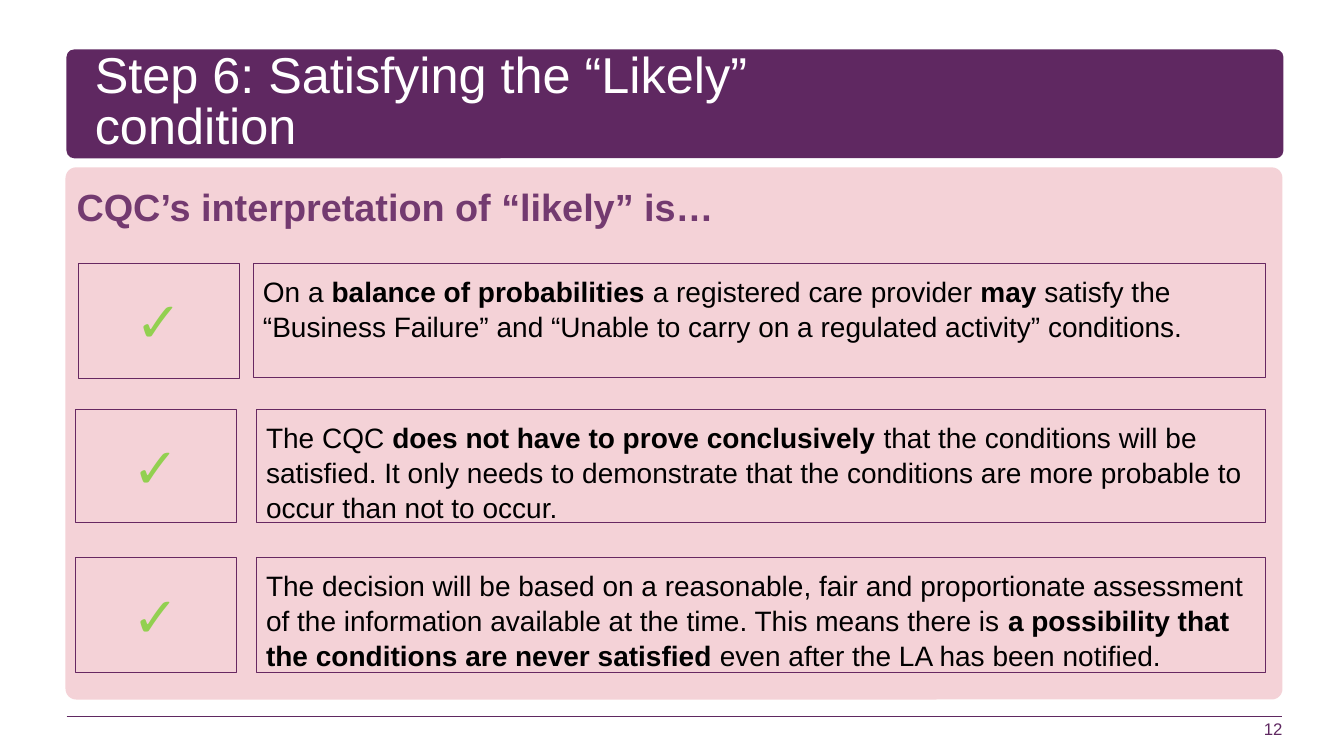
from dataclasses import dataclass

from lxml.etree import SubElement
from pptx import Presentation
from pptx.dml.color import RGBColor
from pptx.enum.shapes import MSO_CONNECTOR, MSO_SHAPE
from pptx.enum.text import MSO_ANCHOR as Anchor, MSO_AUTO_SIZE, PP_ALIGN as Align
from pptx.oxml.ns import qn
from pptx.util import Emu, Pt

PX = 9144  # 100 px to the inch


@dataclass(frozen=True)
class Theme:
    font: str = "Arial"
    banner: str = "5F2861"
    border: str = "672861"
    panel: str = "EFBBC3"
    heading: str = "733A70"
    tick: str = "92D050"
    text: str = "000000"
    white: str = "FFFFFF"
    title_size: int = 36
    heading_size: int = 27
    body_size: int = 20
    tick_size: int = 40
    number_size: int = 12


THEME = Theme()

# Each row: tick box, text box, and runs of (text, bold)
ROWS = [
    ((78, 261, 159, 114), (251, 261, 1004, 114), [
        ("On a ", False),
        ("balance of probabilities ", True),
        ("a registered care provider ", False),
        ("may", True),
        (" satisfy the “Business Failure” and “Unable to carry on a regulated "
         "activity” conditions.", False),
    ]),
    ((75, 406, 159, 112), (254, 406, 1001, 112), [
        ("The CQC ", False),
        ("does not have to prove conclusively ", True),
        ("that the conditions will be satisfied. It only needs to demonstrate that "
         "the conditions are more probable to occur than not to occur.", False),
    ]),
    ((75, 553, 159, 114), (254, 553, 1001, 114), [
        ("The decision will be based on a reasonable, fair and proportionate "
         "assessment of the information available at the time. This means there is ",
         False),
        ("a possibility that the conditions are never satisfied ", True),
        ("even after the LA has been notified.", False),
    ]),
]


def px(*lengths):
    return [Emu(length * PX) for length in lengths]


def color(value):
    return RGBColor.from_string(value)


def add_panel(slide, box, fill, radius, alpha=None):
    panel = slide.shapes.add_shape(MSO_SHAPE.ROUNDED_RECTANGLE, *px(*box))
    panel.adjustments[0] = radius
    panel.shadow.inherit = False
    panel.fill.solid()
    panel.fill.fore_color.rgb = color(fill)
    panel.line.fill.background()
    if alpha:
        rgb = panel.element.spPr.find(qn("a:solidFill")).find(qn("a:srgbClr"))
        SubElement(rgb, qn("a:alpha"), val=str(alpha * 1000))


def add_frame(slide, box, line_width):
    frame = slide.shapes.add_shape(MSO_SHAPE.RECTANGLE, *px(*box))
    frame.shadow.inherit = False
    frame.fill.background()
    frame.line.color.rgb = color(THEME.border)
    frame.line.width = Pt(line_width)
    return frame


def write(shape, runs, size, text_color, inset=0, anchor=Anchor.TOP,
          align=Align.LEFT, spacing=1.0):
    """Fill a shape with one paragraph of (text, bold) runs."""
    frame = shape.text_frame
    frame.word_wrap = True
    frame.auto_size = MSO_AUTO_SIZE.NONE
    frame.vertical_anchor = anchor
    (frame.margin_left, frame.margin_top,
     frame.margin_right, frame.margin_bottom) = px(*[inset] * 4)
    paragraph = frame.paragraphs[0]
    paragraph.alignment = align
    paragraph.line_spacing = spacing
    for text, bold in runs:
        run = paragraph.add_run()
        run.text = text
        run.font.name = THEME.font
        run.font.size = Pt(size)
        run.font.bold = bold
        run.font.color.rgb = color(text_color)


def add_title(slide, box):
    left, top, width, height = box
    add_panel(slide, box, THEME.banner, 0.07)
    title = slide.shapes.title
    title.element.getparent().append(title.element)  # in front of the banner
    title.left, title.top, title.width, title.height = px(
        left + 28, top + 4, 813, height - 9)
    write(title, [("Step 6: Satisfying the “Likely” condition", False)],
          THEME.title_size, THEME.white, anchor=Anchor.MIDDLE, spacing=0.85)


def add_row(slide, tick_box, text_box, runs):
    write(add_frame(slide, text_box, 0.75), runs, THEME.body_size, THEME.text,
          inset=10, spacing=1.04)
    write(add_frame(slide, tick_box, 0.5), [("✓", True)], THEME.tick_size,
          THEME.tick, inset=8, anchor=Anchor.MIDDLE, align=Align.CENTER)


def add_content(slide, box):
    left, top, width, height = box
    add_panel(slide, box, THEME.panel, 0.02, alpha=66)
    heading = slide.shapes.add_textbox(*px(left + 11, top + 15, 1147, 80))
    write(heading, [("CQC’s interpretation of “likely” is…", True)],
          THEME.heading_size, THEME.heading, spacing=1.04)
    for row in ROWS:
        add_row(slide, *row)


def add_footer(slide, box):
    left, top, width, height = box
    rule = slide.shapes.add_connector(
        MSO_CONNECTOR.STRAIGHT, *px(left, top, left + width, top))
    rule.line.color.rgb = color(THEME.banner)
    rule.line.width = Pt(1)
    SubElement(rule.element.spPr, qn("a:effectLst"))
    number = slide.shapes.add_textbox(*px(left + width - 278, top, 278, height))
    write(number, [("12", False)], THEME.number_size, THEME.banner,
          anchor=Anchor.BOTTOM, align=Align.RIGHT)


def main():
    presentation = Presentation()
    presentation.slide_width, presentation.slide_height = px(1333, 750)
    slide = presentation.slides.add_slide(presentation.slide_layouts[5])
    add_title(slide, (66, 49, 1207, 108))
    add_content(slide, (65, 166, 1207, 528))
    add_footer(slide, (66, 711, 1206, 22))
    presentation.save("out.pptx")


if __name__ == "__main__":
    main()
